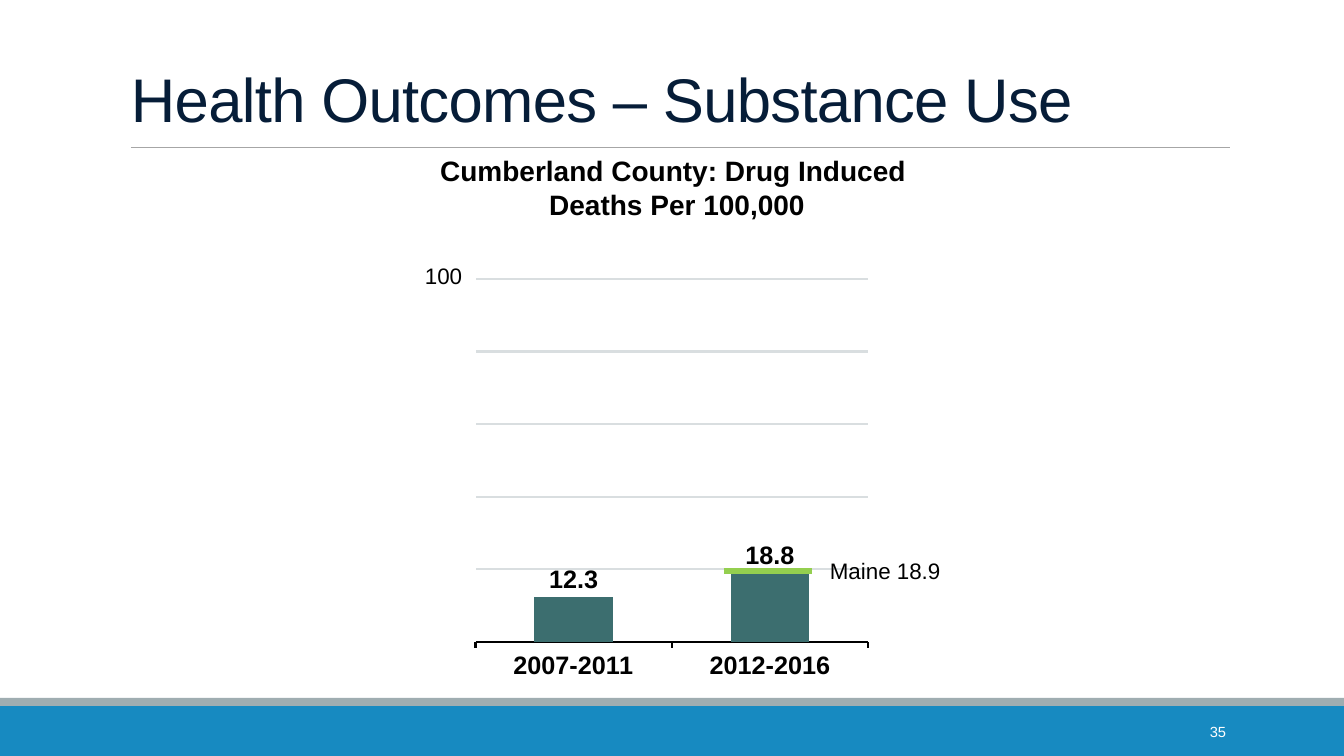
from lxml.etree import SubElement
from pptx import Presentation
from pptx.chart.data import CategoryChartData
from pptx.dml.color import RGBColor
from pptx.enum.chart import XL_CHART_TYPE, XL_LABEL_POSITION, XL_TICK_LABEL_POSITION, XL_TICK_MARK
from pptx.enum.shapes import MSO_CONNECTOR, MSO_SHAPE
from pptx.enum.text import MSO_ANCHOR, PP_ALIGN
from pptx.oxml import parse_xml
from pptx.oxml.ns import nsdecls, qn
from pptx.util import Pt

TITLE = "Health Outcomes – Substance Use"
HEAD = ["Cumberland County: Drug Induced ", "Deaths Per 100,000"]
RATES = {"2007-2011": 12.3, "2012-2016": 18.8}
STATE = "Maine 18.9"
TOP = 100
STEP = 20
PAGE = "35"

THEME = {
    "font": "Arial",
    "navy": "061D38", "black": "000000", "white": "FFFFFF",
    "blue": "178AC1", "gray": "9FADB1", "rule": "A6A6A6",
    "teal": "3C6E6F", "green": "94CF4F", "grid": "D9DEE0",
    "title": 44, "head": 20, "label": 18, "note": 16, "page": 10.5,
}
WIDE, HIGH = 1344, 756
UNIT = 12192000 / WIDE
CHART = (336, 213, 556, 481)
PLOT = {"x": 0.251, "y": 0.137, "w": 0.706, "h": 0.755}


def px(n):
    return round(n * UNIT)


def tint(name):
    return RGBColor.from_string(THEME[name])


def style(font, size, color="black", bold=False):
    font.name = THEME["font"]
    font.size = Pt(THEME[size])
    font.bold = bold
    font.color.rgb = tint(color)


def write(lines, box, size, color="black", bold=False, align=PP_ALIGN.LEFT,
          anchor=MSO_ANCHOR.TOP, lead=None, track=None):
    frame = slide.shapes.add_textbox(*map(px, box)).text_frame
    frame.word_wrap = True
    frame.vertical_anchor = anchor
    for i, line in enumerate(lines):
        para = frame.add_paragraph() if i else frame.paragraphs[0]
        para.alignment = align
        if lead:
            para.line_spacing = lead
        run = para.add_run()
        run.text = line
        style(run.font, size, color, bold)
        if track:
            run.font._element.set("spc", str(track))


def band(top, high, color):
    bar = slide.shapes.add_shape(MSO_SHAPE.RECTANGLE, 0, px(top), px(WIDE), px(high))
    bar.shadow.inherit = False
    bar.fill.solid()
    bar.fill.fore_color.rgb = tint(color)
    bar.line.fill.background()


def rule(left, right, y, color, width):
    line = slide.shapes.add_connector(MSO_CONNECTOR.STRAIGHT, px(left), px(y), px(right), px(y))
    line.line.color.rgb = tint(color)
    line.line.width = Pt(width)
    SubElement(line._element.spPr, qn("a:effectLst"))


def place(chart):
    area = chart._chartSpace.find(".//" + qn("c:plotArea"))
    for old in area.findall(qn("c:layout")):
        area.remove(old)
    modes = "".join(f'<c:{k}Mode val="edge"/>' for k in "xy")
    sizes = "".join(f'<c:{k} val="{v}"/>' for k, v in PLOT.items())
    area.insert(0, parse_xml(
        f'<c:layout {nsdecls("c")}><c:manualLayout><c:layoutTarget val="inner"/>'
        f'{modes}{sizes}</c:manualLayout></c:layout>'))


def draw():
    data = CategoryChartData(number_format="0.0")
    data.categories = list(RATES)
    data.add_series("Deaths", list(RATES.values()))
    chart = slide.shapes.add_chart(XL_CHART_TYPE.COLUMN_CLUSTERED, *map(px, CHART), data).chart
    chart.has_legend = False
    chart.has_title = False
    style(chart.font, "label")
    place(chart)

    axis = chart.value_axis
    axis.minimum_scale, axis.maximum_scale, axis.major_unit = 0, TOP, STEP
    axis.visible = False
    axis.has_major_gridlines = True
    axis.major_gridlines.format.line.color.rgb = tint("grid")
    axis.major_gridlines.format.line.width = Pt(1.5)

    axis = chart.category_axis
    axis.major_tick_mark = XL_TICK_MARK.OUTSIDE
    axis.tick_label_position = XL_TICK_LABEL_POSITION.LOW
    axis.format.line.color.rgb = tint("black")
    axis.format.line.width = Pt(1.5)
    style(axis.tick_labels.font, "label", bold=True)

    plot = chart.plots[0]
    plot.gap_width = 150
    plot.vary_by_categories = False
    fill = plot.series[0].format.fill
    fill.solid()
    fill.fore_color.rgb = tint("teal")
    tags = plot.series[0].data_labels
    tags.show_value = True
    tags.position = XL_LABEL_POSITION.OUTSIDE_END
    tags.number_format = "0.0"
    tags.number_format_is_linked = False
    style(tags.font, "label", bold=True)


deck = Presentation()
deck.slide_width, deck.slide_height = px(WIDE), px(HIGH)
slide = deck.slides.add_slide(deck.slide_layouts[6])

band(706, 50, "blue")
band(698, 8, "gray")
rule(131, 1230, 147, "rule", 0.5)
write([TITLE], (121, 31, 1109, 109), "title", "navy",
      anchor=MSO_ANCHOR.BOTTOM, lead=0.85, track=-50)
draw()
rule(724, 812, 571, "green", 4)
write(HEAD, (343, 149, 668, 78), "head", bold=True, align=PP_ALIGN.CENTER)
write([str(TOP)], (415, 257, 66, 37), "note")
write([STATE], (820, 552, 192, 37), "note")
write([PAGE], (1092, 712, 144, 40), "page", "white",
      align=PP_ALIGN.RIGHT, anchor=MSO_ANCHOR.MIDDLE)

deck.save("out.pptx")
